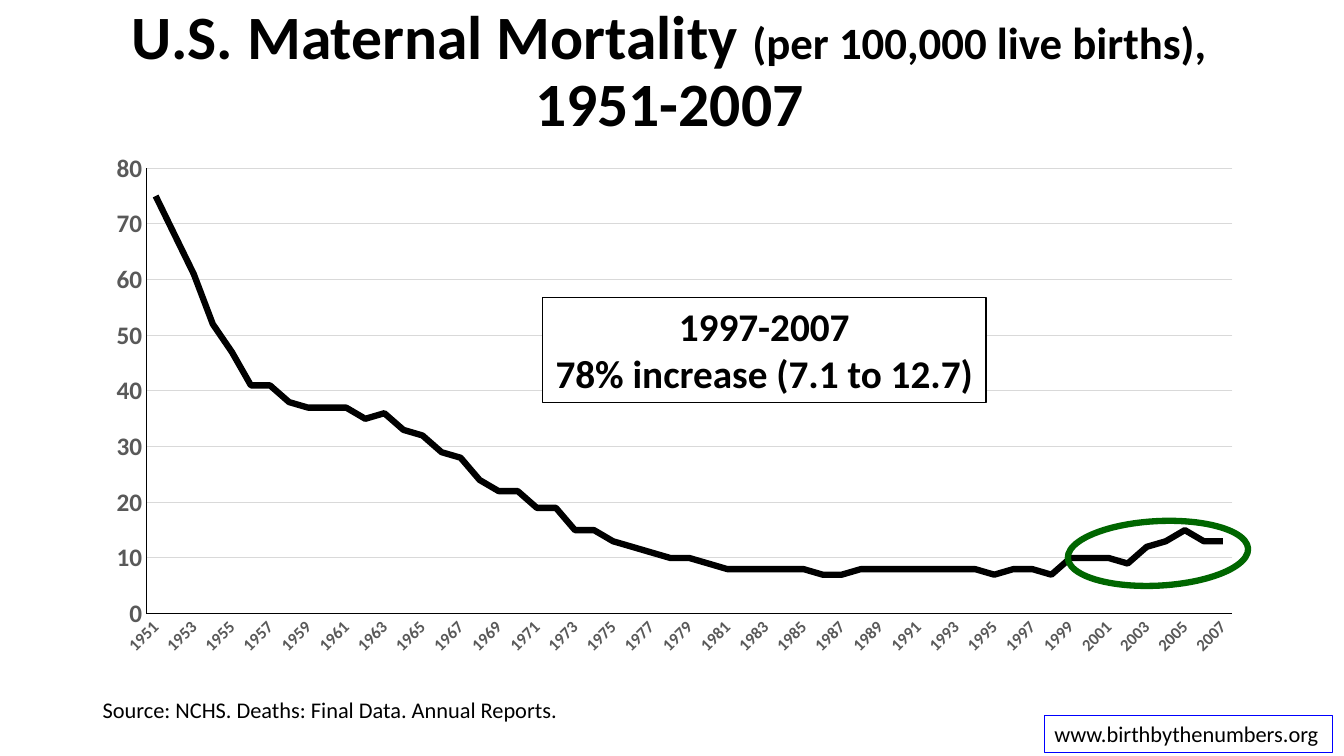
"""Build a slide charting U.S. maternal mortality from 1951 to 2007."""
from dataclasses import dataclass
from typing import Any, Optional

import pptx
import pptx.chart.data
import pptx.dml.color
import pptx.enum.chart
import pptx.enum.shapes
import pptx.enum.text
import pptx.oxml
import pptx.oxml.ns
import pptx.util
from lxml import etree

Inches = pptx.util.Inches
Pt = pptx.util.Pt
RGBColor = pptx.dml.color.RGBColor
Align = pptx.enum.text.PP_ALIGN
Anchor = pptx.enum.text.MSO_ANCHOR
Kind = pptx.enum.shapes.MSO_SHAPE
Tick = pptx.enum.chart.XL_TICK_MARK
qn = pptx.oxml.ns.qn

BLACK = RGBColor(0x00, 0x00, 0x00)
WHITE = RGBColor(0xFF, 0xFF, 0xFF)
GRAY = RGBColor(0x59, 0x59, 0x59)
PALE = RGBColor(0xD9, 0xD9, 0xD9)
GREEN = RGBColor(0x00, 0x66, 0x00)
BLUE = RGBColor(0x00, 0x00, 0xFF)
FONT = "Calibri"

START = 1951
RATES = [
    75, 68, 61, 52, 47, 41, 41, 38, 37, 37,
    37, 35, 36, 33, 32, 29, 28, 24, 22, 22,
    19, 19, 15, 15, 13, 12, 11, 10, 10, 9,
    8, 8, 8, 8, 8, 7, 7, 8, 8, 8,
    8, 8, 8, 8, 7, 8, 8, 7, 10, 10,
    10, 9, 12, 13, 15, 13, 13,
]
PLOT = {"x": 0.046, "y": 0.039, "w": 0.937, "h": 0.788}


@dataclass
class Run:
    text: str
    size: int


@dataclass
class Box:
    left: float
    top: float
    width: float
    height: float
    lines: list[list[Run]]
    bold: bool = False
    align: Any = Align.LEFT
    anchor: Any = Anchor.TOP
    wrap: bool = False
    space: Optional[float] = None
    edge: Optional[RGBColor] = None


TITLE = Box(0.89, 0, 11.5, 1.45, [[
    Run("U.S. Maternal Mortality ", 44),
    Run("(per 100,000 live births), ", 32),
    Run("1951-2007", 44),
]], bold=True, align=Align.CENTER, anchor=Anchor.MIDDLE, wrap=True, space=0.9)
NOTES = [
    Box(5.38, 2.95, 4.4, 1.04,
        [[Run("1997-2007", 28)], [Run("78% increase (7.1 to 12.7)", 28)]],
        bold=True, align=Align.CENTER, edge=BLACK),
    Box(0.92, 6.86, 4.81, 0.37,
        [[Run("Source: NCHS. Deaths: Final Data. Annual Reports.", 16)]]),
    Box(10.36, 7.1, 2.86, 0.37,
        [[Run("www.birthbythenumbers.org", 16)]], edge=BLUE),
]


def set_font(font: Any, size: float, color: RGBColor, bold: bool) -> None:
    font.name = FONT
    font.size = Pt(size)
    font.bold = bold
    font.color.rgb = color


def set_line(line: Any, color: RGBColor, width: float) -> None:
    line.color.rgb = color
    line.width = Pt(width)


def add_run(para: Any, text: str, *, size: float,
            color: RGBColor = BLACK, bold: bool = False) -> None:
    run = para.add_run()
    run.text = text
    set_font(run.font, size, color, bold)


def draw_box(slide: Any, box: Box) -> None:
    area = map(Inches, (box.left, box.top, box.width, box.height))
    if box.edge is None:
        shape = slide.shapes.add_textbox(*area)
    else:
        shape = slide.shapes.add_shape(Kind.RECTANGLE, *area)
        shape.shadow.inherit = False
        shape.fill.solid()
        shape.fill.fore_color.rgb = WHITE
        set_line(shape.line, box.edge, 0.75)
    frame = shape.text_frame
    frame.word_wrap = box.wrap
    frame.vertical_anchor = box.anchor
    if not box.wrap:
        frame.auto_size = pptx.enum.text.MSO_AUTO_SIZE.SHAPE_TO_FIT_TEXT
    for i, line in enumerate(box.lines):
        para = frame.add_paragraph() if i else frame.paragraphs[0]
        para.alignment = box.align
        para.line_spacing = box.space
        for run in line:
            add_run(para, run.text, size=run.size, bold=box.bold)


def style_axis(axis: Any, size: float) -> None:
    axis.major_tick_mark = axis.minor_tick_mark = Tick.NONE
    set_font(axis.tick_labels.font, size, GRAY, True)
    set_line(axis.format.line, BLACK, 0.75)


def set_plot(chart: Any) -> None:
    area = chart.element.find(".//" + qn("c:plotArea")) if hasattr(
        chart, "element") else chart._chartSpace.find(".//" + qn("c:plotArea"))
    for old in area.findall(qn("c:layout")):
        area.remove(old)
    layout = etree.Element(qn("c:layout"))
    manual = etree.SubElement(layout, qn("c:manualLayout"))
    parts = {"layoutTarget": "inner", "xMode": "edge", "yMode": "edge", **PLOT}
    for name, value in parts.items():
        etree.SubElement(manual, qn("c:" + name)).set("val", str(value))
    area.insert(0, layout)


def draw_chart(slide: Any) -> None:
    data = pptx.chart.data.CategoryChartData(number_format="#,##0")
    data.categories = [str(START + i) for i in range(len(RATES))]
    data.add_series("Series 1", RATES)
    chart = slide.shapes.add_chart(
        pptx.enum.chart.XL_CHART_TYPE.LINE, Inches(0.92), Inches(1.45),
        Inches(11.5), Inches(5.61), data).chart
    chart.has_title = chart.has_legend = False
    set_font(chart.font, 10, BLACK, False)
    chart.plots[0].vary_by_categories = False
    rates = chart.plots[0].series[0]
    rates.smooth = False
    rates.marker.style = pptx.enum.chart.XL_MARKER_STYLE.NONE
    set_line(rates.format.line, BLACK, 4.5)

    years, scale = chart.category_axis, chart.value_axis
    style_axis(years, 12)
    style_axis(scale, 18)
    scale.minimum_scale, scale.maximum_scale, scale.major_unit = 0, 80, 10
    scale.tick_labels.number_format = "#,##0"
    scale.tick_labels.number_format_is_linked = False
    set_line(scale.major_gridlines.format.line, PALE, 0.75)
    node = years._element
    node.find(qn("c:txPr")).find(qn("a:bodyPr")).set("rot", "-2700000")
    skip = etree.Element(qn("c:tickLblSkip"))
    skip.set("val", "2")
    node.find(qn("c:noMultiLvlLbl")).addprevious(skip)
    set_plot(chart)


def draw_ring(slide: Any) -> None:
    ring = slide.shapes.add_shape(
        Kind.OVAL, Inches(10.59), Inches(5.17), Inches(1.79), Inches(0.64))
    ring.rotation = 357
    ring.shadow.inherit = False
    ring.fill.background()
    set_line(ring.line, GREEN, 4.5)


def main() -> None:
    deck = pptx.Presentation()
    deck.slide_width, deck.slide_height = Inches(13.33), Inches(7.5)
    slide = deck.slides.add_slide(deck.slide_layouts[6])
    draw_box(slide, TITLE)
    draw_chart(slide)
    draw_ring(slide)
    for note in NOTES:
        draw_box(slide, note)
    deck.save("out.pptx")


if __name__ == "__main__":
    main()
